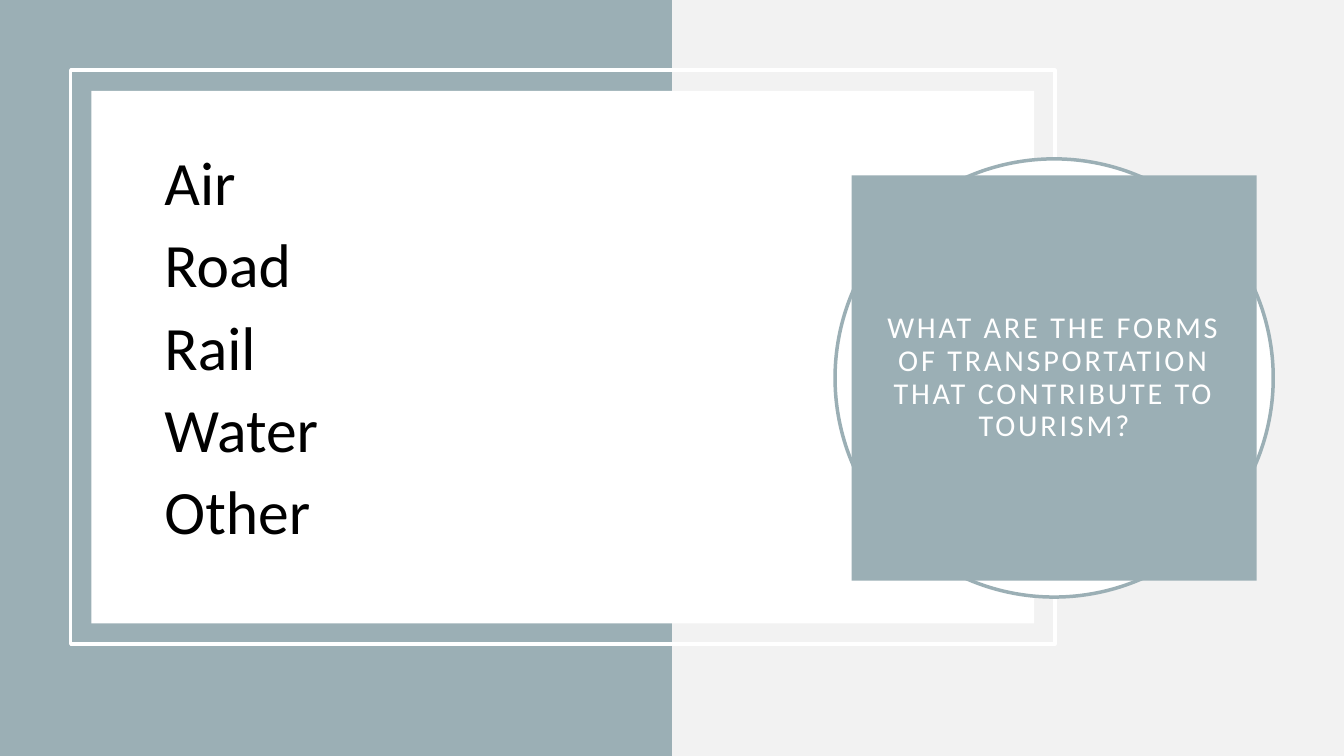
from pptx import Presentation
from pptx.dml.color import RGBColor
from pptx.enum.shapes import MSO_SHAPE as Preset
from pptx.enum.text import MSO_ANCHOR as Anchor, MSO_AUTO_SIZE as AutoSize, PP_ALIGN as Align
from pptx.oxml.xmlchemy import OxmlElement
from pptx.util import Pt

SAGE = "9BAFB5"
PALE = "F2F2F2"
WHITE = "FFFFFF"
BLACK = "000000"
FORMS = ["Air", "Road", "Rail", "Water", "Other"]
QUESTION = "WHAT ARE THE FORMS OF TRANSPORTATION THAT CONTRIBUTE TO TOURISM?"


def paint(target, color):
    target.solid()
    target.fore_color.rgb = RGBColor.from_string(color)


def place(shape, box):
    shape.left, shape.top, shape.width, shape.height = map(Pt, box)


def inset(box, gap):
    left, top, width, height = box
    return left + gap, top + gap, width - 2 * gap, height - 2 * gap


def add_panel(slide, preset, box, fill=None, line=None):
    shape = slide.shapes.add_shape(preset, *map(Pt, box))
    shape.shadow.inherit = False
    if fill:
        paint(shape.fill, fill)
    else:
        shape.fill.background()
    if line:
        paint(shape.line.fill, line)
        shape.line.width = Pt(2.5)
    else:
        shape.line.fill.background()


def write(paragraph, text, size, color, align=Align.LEFT, line_spacing=1.0,
          after=0, tracking=0):
    paragraph.alignment = align
    paragraph.line_spacing = line_spacing
    paragraph.space_before = Pt(0)
    paragraph.space_after = Pt(after)
    run = paragraph.add_run()
    run.text = text
    run.font.name = "Calibri"
    run.font.size = Pt(size)
    paint(run.font.fill, color)
    if tracking:
        run.font._element.set("spc", str(tracking * 100))


def remove_bullet(paragraph):
    properties = paragraph._p.get_or_add_pPr()
    properties.set("marL", "0")
    properties.set("indent", "0")
    properties.append(OxmlElement("a:buNone"))


def bring_to_front(slide, shape):
    slide.shapes._spTree.append(shape._element)


def build_background(slide, box):
    left, top, width, height = box
    paint(slide.background.fill, PALE)
    add_panel(slide, Preset.RECTANGLE, (left, top, width / 2, height), fill=SAGE)


def build_list(slide, box):
    left, top, width, height = box
    add_panel(slide, Preset.RECTANGLE, box, line=WHITE)
    add_panel(slide, Preset.RECTANGLE, inset(box, 14.8), fill=WHITE)
    body = slide.placeholders[1]
    place(body, (left + 59.8, top + 49, 197.3, 298))
    bring_to_front(slide, body)
    frame = body.text_frame
    frame.auto_size = AutoSize.NONE
    frame.vertical_anchor = Anchor.TOP
    for index, form in enumerate(FORMS):
        paragraph = frame.add_paragraph() if index else frame.paragraphs[0]
        write(paragraph, form, size=44, color=BLACK, after=6)
        remove_bullet(paragraph)


def build_question(slide, box):
    add_panel(slide, Preset.OVAL, box, fill=WHITE, line=SAGE)
    title = slide.shapes.title
    place(title, inset(box, 11.8))
    bring_to_front(slide, title)
    paint(title.fill, SAGE)
    frame = title.text_frame
    frame.word_wrap = True
    frame.auto_size = AutoSize.NONE
    frame.vertical_anchor = Anchor.MIDDLE
    frame.margin_left = frame.margin_right = Pt(14.4)
    frame.margin_top = frame.margin_bottom = Pt(14.4)
    write(frame.paragraphs[0], QUESTION, size=21.6, color=WHITE,
          align=Align.CENTER, line_spacing=0.9, tracking=2)


def main():
    presentation = Presentation()
    presentation.slide_width = Pt(960)
    presentation.slide_height = Pt(540)
    slide = presentation.slides.add_slide(presentation.slide_layouts[1])
    build_background(slide, (0, 0, 960, 540))
    build_list(slide, (50.5, 50.2, 703, 410))
    build_question(slide, (596.5, 113.5, 313, 313))
    presentation.save("out.pptx")


if __name__ == "__main__":
    main()
